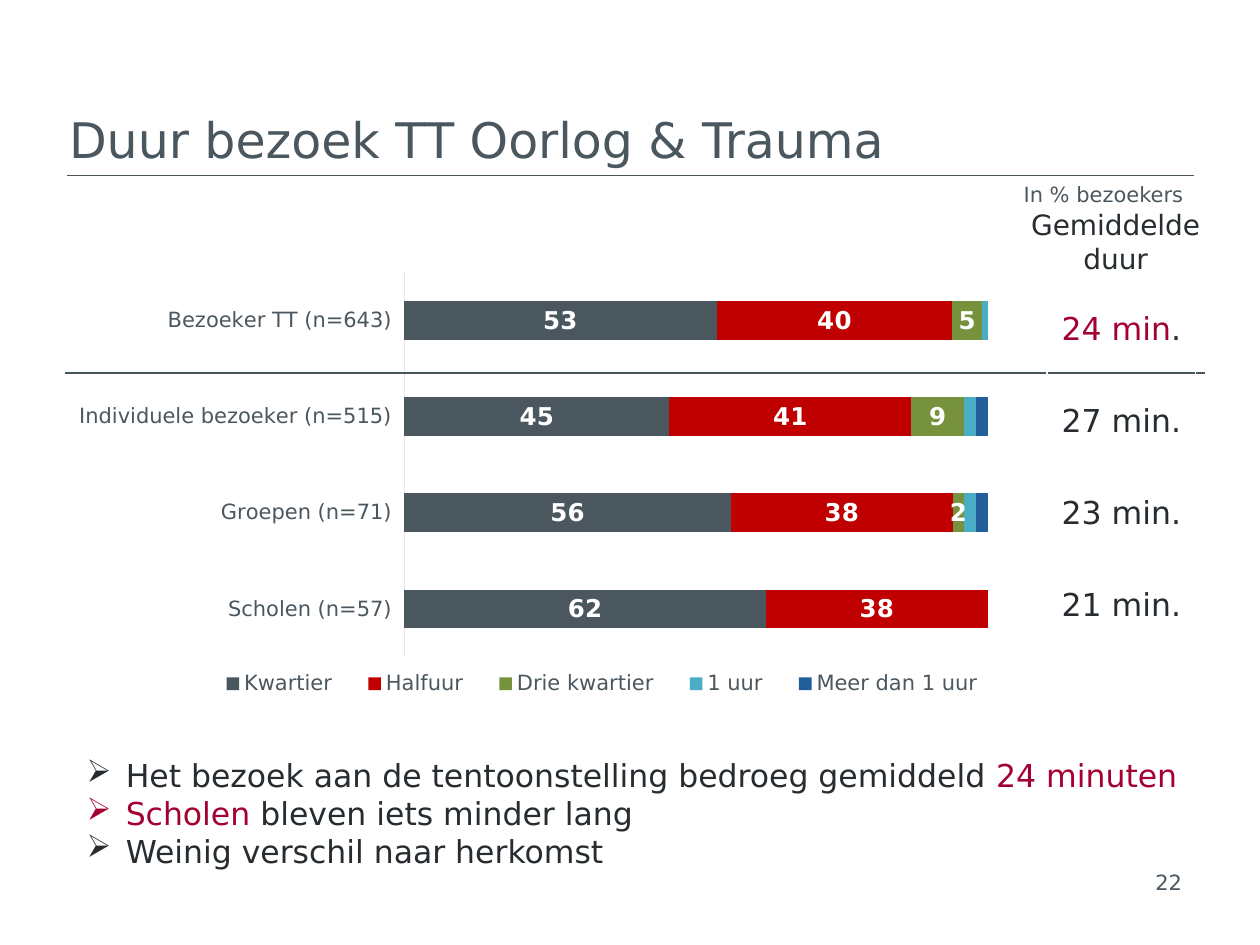
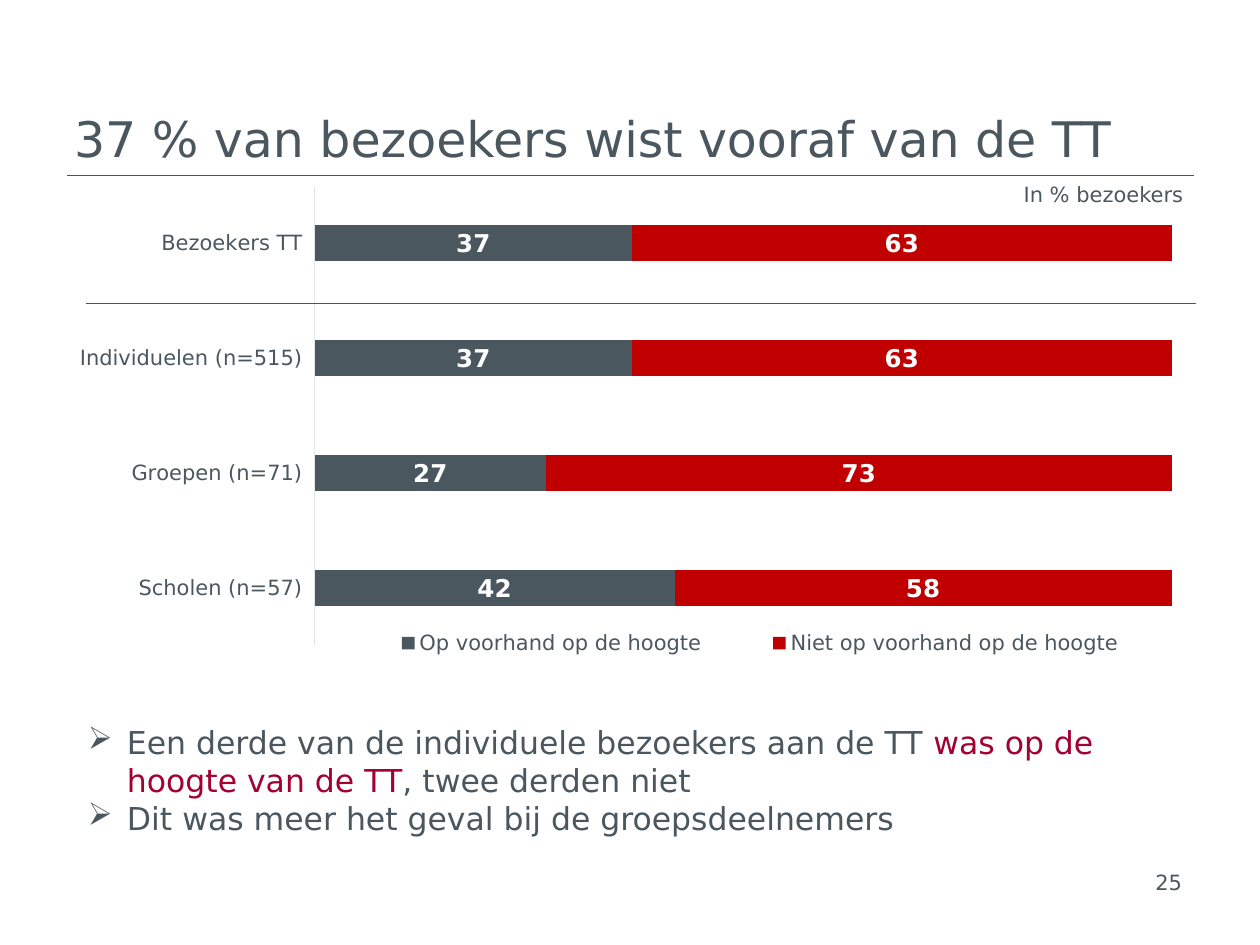
"""Build two slides on exhibition visitors with stacked bar charts."""
from dataclasses import dataclass

from lxml import etree
from pptx import Presentation
from pptx.chart.data import CategoryChartData
from pptx.dml.color import RGBColor
from pptx.enum.chart import XL_CHART_TYPE, XL_LEGEND_POSITION, XL_TICK_LABEL_POSITION, XL_TICK_MARK
from pptx.enum.shapes import MSO_CONNECTOR
from pptx.enum.text import MSO_ANCHOR, PP_ALIGN
from pptx.oxml import parse_xml
from pptx.oxml.ns import nsdecls, qn
from pptx.util import Inches, Pt

STACKED = XL_CHART_TYPE.BAR_STACKED_100
BOTTOM = XL_LEGEND_POSITION.BOTTOM
LOW = XL_TICK_LABEL_POSITION.LOW
NO_TICK = XL_TICK_MARK.NONE
STRAIGHT = MSO_CONNECTOR.STRAIGHT
TOP, MIDDLE = MSO_ANCHOR.TOP, MSO_ANCHOR.MIDDLE
LEFT, CENTER, RIGHT = PP_ALIGN.LEFT, PP_ALIGN.CENTER, PP_ALIGN.RIGHT


@dataclass(frozen=True)
class Theme:
    """Colours, font and type sizes shared by the slides."""

    font: str = "DejaVu Sans"
    slate: str = "4B575F"
    rule: str = "49555D"
    ink: str = "262C30"
    accent: str = "A40133"
    axis: str = "E3E6E8"
    white: str = "FFFFFF"
    bars: tuple[str, ...] = ("4B575F", "C00000", "76923C", "4BACC6", "215E9A")
    title: float = 28
    body: float = 18
    heading: float = 16
    value: float = 14
    small: float = 12
    chart: float = 10.5


THEME = Theme()


@dataclass(frozen=True)
class Area:
    """A rectangle in inches, or in fractions of a chart."""

    left: float
    top: float
    width: float
    height: float

    def inches(self) -> tuple:
        """Return the rectangle as slide lengths."""
        return tuple(Inches(value) for value in (self.left, self.top, self.width, self.height))


@dataclass(frozen=True)
class Span:
    """A stretch of text in one colour."""

    text: str
    color: str = THEME.ink


@dataclass(frozen=True)
class Answer:
    """One chart series: an answer and its share per visitor group."""

    name: str
    shares: tuple[int, ...]
    labelled: bool = True


@dataclass(frozen=True)
class BarChart:
    """A stacked chart with the places of its plot and legend."""

    area: Area
    plot: Area
    legend: Area
    gap: int
    groups: tuple[str, ...]
    answers: tuple[Answer, ...]


@dataclass(frozen=True)
class VisitorSlide:
    """The content of one slide."""

    title: str
    title_area: Area
    unit_area: Area
    chart: BarChart
    divider: tuple[float, float, float]
    findings: tuple[tuple[Span, ...], ...]
    findings_area: Area
    number: str


NUMBER_AREA = Area(7.15, 6.8, 2.33, 0.4)
HEADING_AREA = Area(7.99, 1.6, 1.73, 0.64)
DURATION_AREA = Area(8.31, 2.25, 1.18, 2.92)
DURATIONS = (
    (Span("24 min", THEME.accent), Span(".")),
    (Span("27 min."),),
    (Span("23 min."),),
    (Span("21 min."),),
)

DURATION_SLIDE = VisitorSlide(
    "Duur bezoek TT Oorlog & Trauma",
    Area(0.45, 0.55, 9.11, 1.11),
    Area(0.52, 1.39, 8.97, 0.3),
    BarChart(
        Area(0.52, 2.09, 7.47, 3.55),
        Area(0.36, 0.02, 0.62, 0.86),
        Area(0.14, 0.9, 0.86, 0.08),
        150,
        ("Bezoeker TT (n=643)", "Individuele bezoeker (n=515)", "Groepen (n=71)", "Scholen (n=57)"),
        (
            Answer("Kwartier", (53, 45, 56, 62)),
            Answer("Halfuur", (40, 41, 38, 38)),
            Answer("Drie kwartier", (5, 9, 2, 0)),
            Answer("1 uur", (1, 2, 2, 0), False),
            Answer("Meer dan 1 uur", (0, 2, 2, 0), False),
        ),
    ),
    (0.52, 9.56, 2.96),
    (
        (Span("Het bezoek aan de tentoonstelling bedroeg gemiddeld "), Span("24 minuten", THEME.accent)),
        (Span("Scholen", THEME.accent), Span(" bleven iets minder lang")),
        (Span("Weinig verschil naar herkomst"),),
    ),
    Area(0.59, 5.95, 8.97, 1.01),
    "22",
)

AWARENESS_SLIDE = VisitorSlide(
    "37 % van bezoekers wist vooraf van de TT",
    Area(0.49, 0.54, 8.97, 1.11),
    Area(0.49, 1.39, 9, 0.3),
    BarChart(
        Area(0.53, 1.39, 8.95, 4.15),
        Area(0.22, 0.02, 0.76, 0.88),
        Area(0.24, 0.86, 0.75, 0.07),
        219,
        ("Bezoekers TT", "Individuelen (n=515)", "Groepen (n=71)", "Scholen (n=57)"),
        (
            Answer("Op voorhand op de hoogte", (37, 37, 27, 42)),
            Answer("Niet op voorhand op de hoogte", (63, 63, 73, 58)),
        ),
    ),
    (0.68, 9.49, 2.41),
    (
        (
            Span("Een derde van de individuele bezoekers aan de TT ", THEME.slate),
            Span("was op de hoogte van de TT", THEME.accent),
            Span(", twee derden niet", THEME.slate),
        ),
        (Span("Dit was meer het geval bij de groepsdeelnemers", THEME.slate),),
    ),
    Area(0.6, 5.69, 8.73, 1.01),
    "25",
)


def style_font(font, size: float, color: str, bold: bool = False) -> None:
    """Apply the theme font with a size and colour."""
    font.name = THEME.font
    font.size = Pt(size)
    font.bold = bold
    font.color.rgb = RGBColor.from_string(color)


def fill_paragraph(para, spans: tuple[Span, ...], size: float, align, bullet: bool = False) -> None:
    """Write the spans into a paragraph, with an arrow bullet if asked."""
    para.alignment = align
    if bullet:
        properties = para._p.get_or_add_pPr()
        properties.set("marL", str(Inches(0.31)))
        properties.set("indent", str(-Inches(0.31)))
        etree.SubElement(properties, qn("a:buChar")).set("char", "➢")
    style_font(para.font, size, spans[0].color)
    for span in spans:
        run = para.add_run()
        run.text = span.text
        if len(spans) > 1:
            run.font.color.rgb = RGBColor.from_string(span.color)


def add_text(page, area: Area, lines, size: float, align=LEFT, anchor=TOP, bullet: bool = False) -> None:
    """Add a wrapping text box with one paragraph per line."""
    frame = page.shapes.add_textbox(*area.inches()).text_frame
    frame.word_wrap = True
    frame.vertical_anchor = anchor
    for index, spans in enumerate(lines):
        para = frame.add_paragraph() if index else frame.paragraphs[0]
        fill_paragraph(para, spans, size, align, bullet)


def add_rule(page, left: float, right: float, top: float, weight: float) -> None:
    """Draw a thin horizontal line."""
    ends = (Inches(left), Inches(top), Inches(right), Inches(top))
    rule = page.shapes.add_connector(STRAIGHT, *ends)
    rule.line.color.rgb = RGBColor.from_string(THEME.rule)
    rule.line.width = Pt(weight)
    etree.SubElement(rule._element.spPr, qn("a:effectLst"))


def set_layout(parent, index: int, area: Area, inner: bool = False) -> None:
    """Fix the place of a chart part in fractions of the chart."""
    for former in parent.findall(qn("c:layout")):
        parent.remove(former)
    layout = etree.Element(qn("c:layout"))
    manual = etree.SubElement(layout, qn("c:manualLayout"))
    settings = [("layoutTarget", "inner")] if inner else []
    settings += [("xMode", "edge"), ("yMode", "edge")]
    settings += [("x", area.left), ("y", area.top), ("w", area.width), ("h", area.height)]
    for name, value in settings:
        etree.SubElement(manual, qn(f"c:{name}")).set("val", str(value))
    parent.insert(index, layout)


def label_bars(series, shares: tuple[int, ...]) -> None:
    """Show the values in the bars, leaving out zeros."""
    labels = series.data_labels
    labels.show_value = True
    labels.number_format = "0"
    labels.number_format_is_linked = False
    style_font(labels.font, THEME.value, THEME.white, True)
    zeros = [index for index, share in enumerate(shares) if share == 0]
    for position, index in enumerate(zeros):
        hidden = f'<c:dLbl {nsdecls("c")}><c:idx val="{index}"/><c:delete val="1"/></c:dLbl>'
        labels._element.insert(position, parse_xml(hidden))


def add_bars(page, bars: BarChart) -> None:
    """Add the stacked bar chart with its legend."""
    data = CategoryChartData(number_format="0")
    data.categories = bars.groups
    for answer in bars.answers:
        data.add_series(answer.name, answer.shares)
    chart = page.shapes.add_chart(STACKED, *bars.area.inches(), data).chart
    chart.has_title = False
    style_font(chart.font, THEME.chart, THEME.slate)

    plot = chart.plots[0]
    plot.gap_width, plot.overlap, plot.vary_by_categories = bars.gap, 100, False
    for series, answer, color in zip(plot.series, bars.answers, THEME.bars):
        series.format.fill.solid()
        series.format.fill.fore_color.rgb = RGBColor.from_string(color)
        if answer.labelled:
            label_bars(series, answer.shares)

    groups = chart.category_axis
    groups.reverse_order = True
    groups.major_tick_mark = groups.minor_tick_mark = NO_TICK
    groups.tick_label_position = LOW
    groups.format.line.color.rgb = RGBColor.from_string(THEME.axis)
    groups.format.line.width = Pt(0.75)
    style_font(groups.tick_labels.font, THEME.small, THEME.slate)
    chart.value_axis.visible = False
    chart.value_axis.has_major_gridlines = False

    chart.has_legend = True
    chart.legend.position = BOTTOM
    chart.legend.include_in_layout = False
    style_font(chart.legend.font, THEME.small, THEME.slate)
    set_layout(chart.element.find(".//" + qn("c:plotArea")), 0, bars.plot, True)
    set_layout(chart.element.find(".//" + qn("c:legend")), 1, bars.legend)


def add_durations(page) -> None:
    """Add the column of average visit lengths with its heading."""
    add_text(page, HEADING_AREA, [(Span("Gemiddelde duur"),)], THEME.heading, CENTER)
    table = page.shapes.add_table(len(DURATIONS), 1, *DURATION_AREA.inches()).table
    table.first_row = table.horz_banding = False
    for index, spans in enumerate(DURATIONS):
        cell = table.cell(index, 0)
        cell.fill.background()
        cell.vertical_anchor = MIDDLE
        fill_paragraph(cell.text_frame.paragraphs[0], spans, THEME.body, CENTER)


def add_visitor_slide(deck, content: VisitorSlide):
    """Add a slide with title, chart, findings and page number."""
    page = deck.slides.add_slide(deck.slide_layouts[6])
    add_rule(page, 0.53, 9.48, 1.39, 0.25)
    add_text(page, content.title_area, [(Span(content.title, THEME.slate),)], THEME.title, anchor=MIDDLE)
    add_text(page, content.findings_area, content.findings, THEME.body, bullet=True)
    add_text(page, NUMBER_AREA, [(Span(content.number, THEME.slate),)], THEME.small, RIGHT, MIDDLE)
    add_bars(page, content.chart)
    add_rule(page, *content.divider, 0.75)
    add_text(page, content.unit_area, [(Span("In % bezoekers", THEME.slate),)], THEME.small, RIGHT)
    return page


def main() -> None:
    """Build and save the deck."""
    deck = Presentation()
    deck.slide_width, deck.slide_height = Inches(10), Inches(7.5)
    add_durations(add_visitor_slide(deck, DURATION_SLIDE))
    add_visitor_slide(deck, AWARENESS_SLIDE)
    deck.save("out.pptx")


if __name__ == "__main__":
    main()
